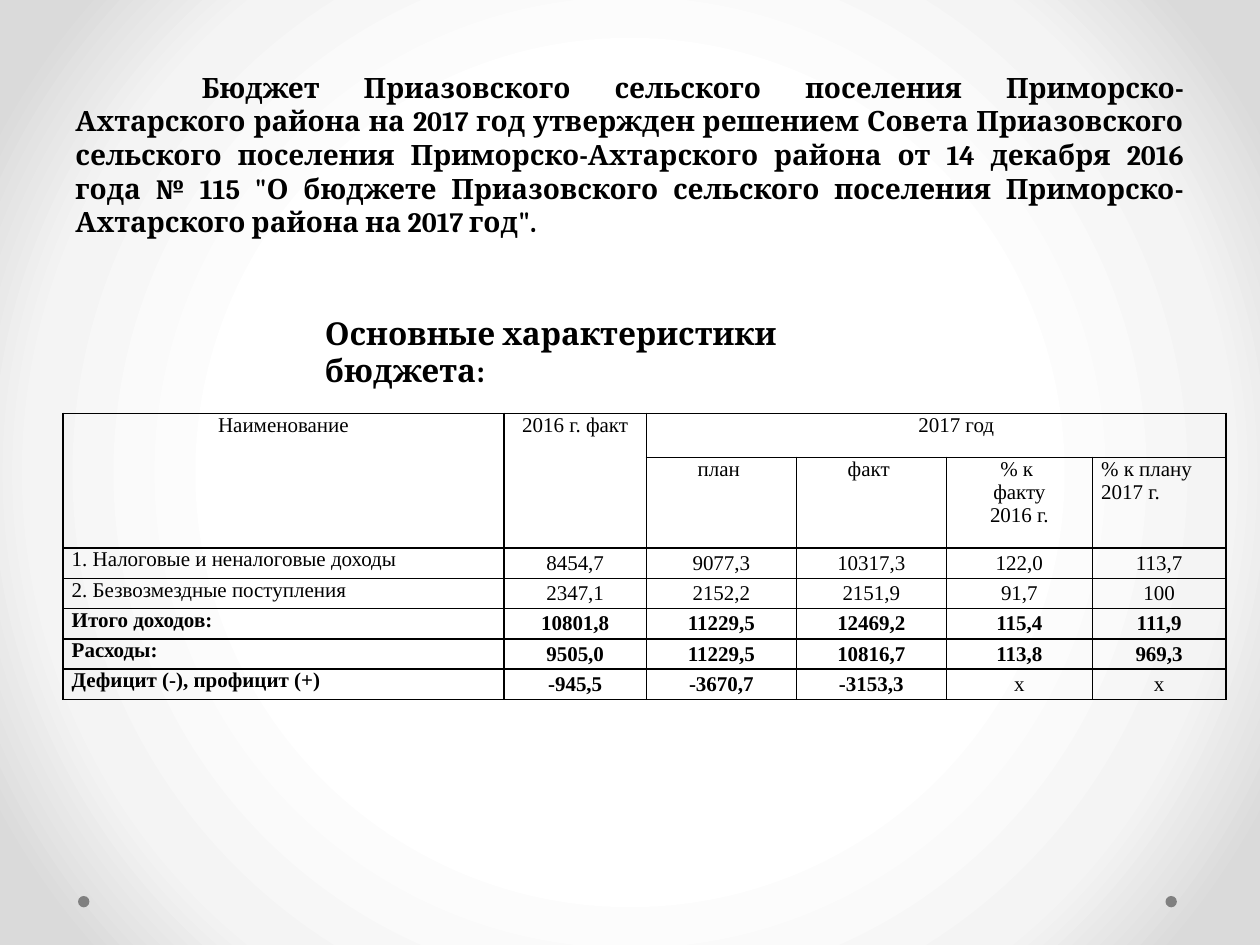
from dataclasses import dataclass

from lxml.etree import SubElement
from pptx import Presentation
from pptx.dml.color import RGBColor
from pptx.enum.shapes import MSO_SHAPE as Preset
from pptx.enum.text import MSO_ANCHOR as Anchor, PP_ALIGN as Align
from pptx.oxml import parse_xml
from pptx.oxml.ns import nsdecls, qn
from pptx.util import Pt

BLACK = RGBColor(0, 0, 0)
GREY = RGBColor(0x80, 0x80, 0x80)
GLOW = ((50, RGBColor(0xFF, 0xFF, 0xFF)),
        (76, RGBColor(0xF4, 0xF4, 0xF4)),
        (92, RGBColor(0xDA, 0xDA, 0xDA)))
SERIF = "Cambria"
TABLE_FONT = "Times New Roman"

COLUMN_WIDTHS = (252, 81.4, 85.7, 85.7, 83.5, 76.3)
HEADER_HEIGHTS = (25.2, 51.8)
BODY_HEIGHT = 17.3

DECREE = (
    "Бюджет Приазовского сельского поселения Приморско-Ахтарского района "
    "на 2017 год утвержден решением Совета Приазовского сельского поселения "
    "Приморско-Ахтарского района от 14 декабря 2016 года № 115 "
    "\"О бюджете Приазовского сельского поселения Приморско-Ахтарского "
    "района на 2017 год\"."
)


@dataclass(frozen=True)
class HeaderCell:
    row: int
    column: int
    lines: tuple[str, ...]
    last_row: int
    last_column: int
    align: Align = Align.CENTER
    indent: float = 0


@dataclass(frozen=True)
class BudgetLine:
    label: str
    values: tuple[str, ...]
    bold: bool = False


HEADER = (
    HeaderCell(0, 0, ("Наименование",), 1, 0),
    HeaderCell(0, 1, ("2016 г. факт",), 1, 1),
    HeaderCell(0, 2, ("2017 год",), 0, 5, indent=23),
    HeaderCell(1, 2, ("план ",), 1, 2),
    HeaderCell(1, 3, ("факт ",), 1, 3),
    HeaderCell(1, 4, ("% к ", "факту", "2016 г."), 1, 4),
    HeaderCell(1, 5, ("% к плану", "2017 г."), 1, 5, Align.LEFT),
)
BUDGET = (
    BudgetLine("1. Налоговые и неналоговые доходы",
               ("8454,7", "9077,3", "10317,3", "122,0", "113,7")),
    BudgetLine("2. Безвозмездные поступления",
               ("2347,1", "2152,2", "2151,9", "91,7", "100")),
    BudgetLine("Итого доходов:",
               ("10801,8", "11229,5", "12469,2", "115,4", "111,9"), True),
    BudgetLine("Расходы:",
               ("9505,0", "11229,5", "10816,7", "113,8", "969,3"), True),
    BudgetLine("Дефицит (-), профицит (+)",
               ("-945,5", "-3670,7", "-3153,3", "х", "х"), True),
)


def paint_background(slide) -> None:
    """Fill the slide with a gradient that darkens away from the centre."""
    stops = "".join(f'<a:gs pos="{percent * 1000}"><a:srgbClr val="{color}"/></a:gs>'
                    for percent, color in GLOW)
    gradient = parse_xml(
        f'<a:gradFill {nsdecls("a")} rotWithShape="1"><a:gsLst>{stops}</a:gsLst>'
        '<a:path path="circle"><a:fillToRect l="50000" t="50000" r="50000" b="50000"/>'
        '</a:path></a:gradFill>')
    fill = slide.background.fill
    fill.solid()
    fill.fore_color.rgb = GLOW[0][1]
    solid = slide.element.find(".//" + qn("p:bgPr")).find(qn("a:solidFill"))
    solid.getparent().replace(solid, gradient)


def add_dot(slide, left: float) -> None:
    dot = slide.shapes.add_shape(Preset.OVAL, Pt(left), Pt(512), Pt(6.5), Pt(6.5))
    dot.shadow.inherit = False
    dot.fill.solid()
    dot.fill.fore_color.rgb = GREY
    dot.line.fill.background()


def add_run(paragraph, text: str, size: float, font: str, bold: bool) -> None:
    run = paragraph.add_run()
    run.text = text
    run.font.size = Pt(size)
    run.font.name = font
    run.font.bold = bold
    run.font.color.rgb = BLACK


def add_statement(slide, box: tuple[float, ...], text: str, size: float,
                  align: Align, anchor: Anchor, indent: float = 0) -> None:
    frame = slide.shapes.add_textbox(*map(Pt, box)).text_frame
    frame.word_wrap = True
    frame.vertical_anchor = anchor
    paragraph = frame.paragraphs[0]
    paragraph.alignment = align
    if indent:
        paragraph._p.get_or_add_pPr().set("indent", str(Pt(indent)))
    add_run(paragraph, text, size, SERIF, True)


def style_cell(cell) -> None:
    """Clear the fill, set the margins and rule all four sides."""
    cell.margin_left = cell.margin_right = Pt(5)
    cell.margin_top = cell.margin_bottom = Pt(0)
    properties = cell._tc.get_or_add_tcPr()
    for side in ("lnL", "lnR", "lnT", "lnB"):
        border = SubElement(properties, qn(f"a:{side}"), w=str(Pt(1)))
        color = SubElement(border, qn("a:solidFill"))
        SubElement(color, qn("a:srgbClr"), val=str(BLACK))
    cell.fill.background()


def write_cell(cell, lines: tuple[str, ...], align: Align,
               anchor: Anchor = Anchor.TOP, bold: bool = False,
               indent: float = 0) -> None:
    cell.vertical_anchor = anchor
    frame = cell.text_frame
    for number, line in enumerate(lines):
        paragraph = frame.add_paragraph() if number else frame.paragraphs[0]
        paragraph.alignment = align
        if indent:
            paragraph._p.get_or_add_pPr().set("marL", str(Pt(indent)))
        add_run(paragraph, line, 12, TABLE_FONT, bold)


def add_budget_table(slide) -> None:
    heights = HEADER_HEIGHTS + (BODY_HEIGHT,) * len(BUDGET)
    table = slide.shapes.add_table(
        len(heights), len(COLUMN_WIDTHS), Pt(36), Pt(236.2),
        Pt(sum(COLUMN_WIDTHS)), Pt(sum(heights))).table
    table.first_row = table.horz_banding = False
    for column, width in zip(table.columns, COLUMN_WIDTHS):
        column.width = Pt(width)
    for row, height in zip(table.rows, heights):
        row.height = Pt(height)
    for cell in table.iter_cells():
        style_cell(cell)

    for head in HEADER:
        cell = table.cell(head.row, head.column)
        if (head.last_row, head.last_column) != (head.row, head.column):
            cell.merge(table.cell(head.last_row, head.last_column))
        write_cell(cell, head.lines, head.align, indent=head.indent)

    for row, entry in enumerate(BUDGET, start=len(HEADER_HEIGHTS)):
        write_cell(table.cell(row, 0), (entry.label,), Align.LEFT, bold=entry.bold)
        for column, value in enumerate(entry.values, start=1):
            write_cell(table.cell(row, column), (value,), Align.CENTER,
                       Anchor.MIDDLE, entry.bold and value != "х")


def main() -> None:
    deck = Presentation()
    deck.slide_width, deck.slide_height = Pt(720), Pt(540)
    slide = deck.slides.add_slide(deck.slide_layouts[6])
    paint_background(slide)
    for left in (666, 44.6):
        add_dot(slide, left)
    add_statement(slide, (36, 0, 648, 139.7), DECREE, 16,
                  Align.JUSTIFY, Anchor.BOTTOM, indent=72)
    add_statement(slide, (178.6, 175.7, 352, 28.8), "Основные характеристики бюджета:",
                  18, Align.LEFT, Anchor.TOP)
    add_budget_table(slide)
    deck.save("out.pptx")


if __name__ == "__main__":
    main()
